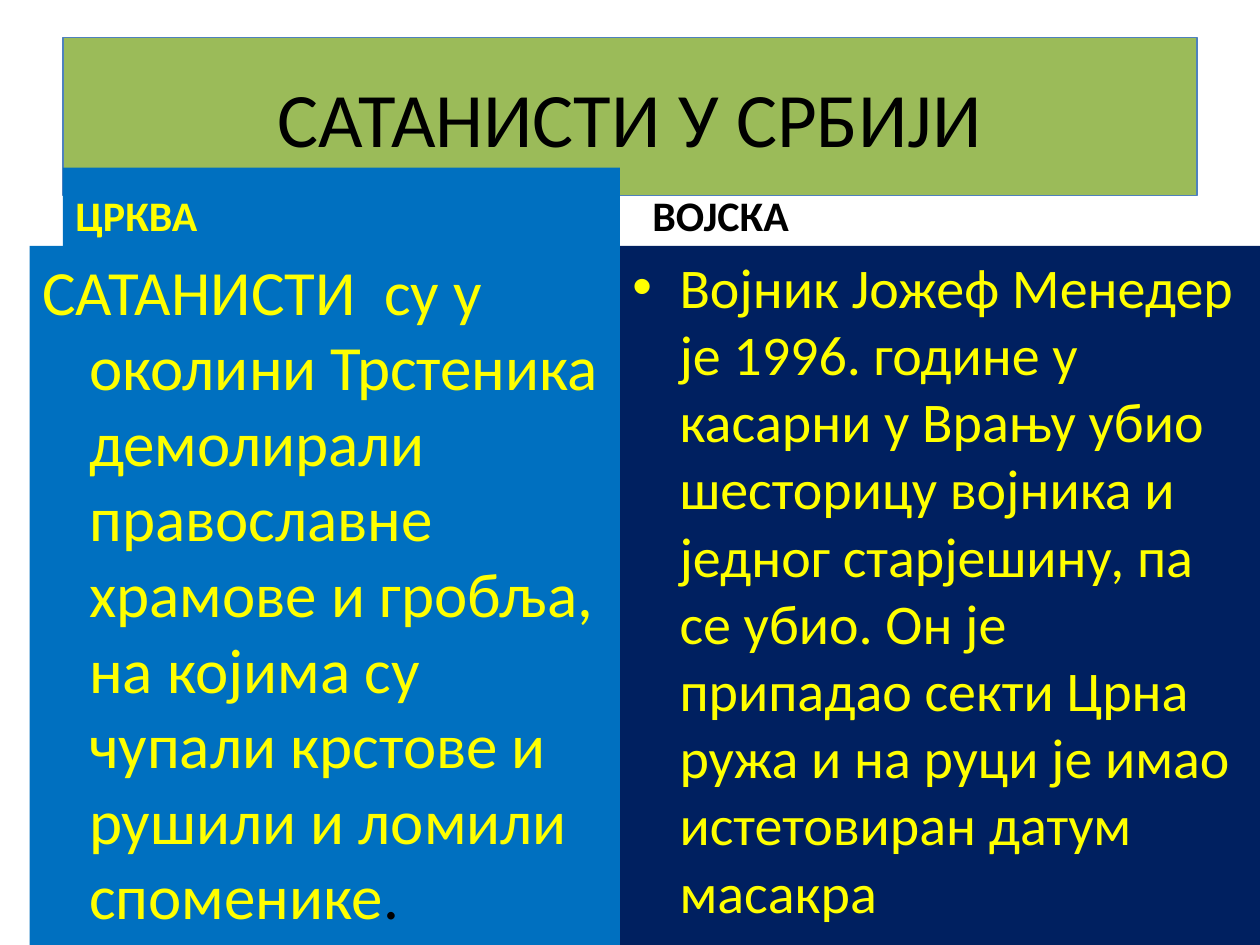
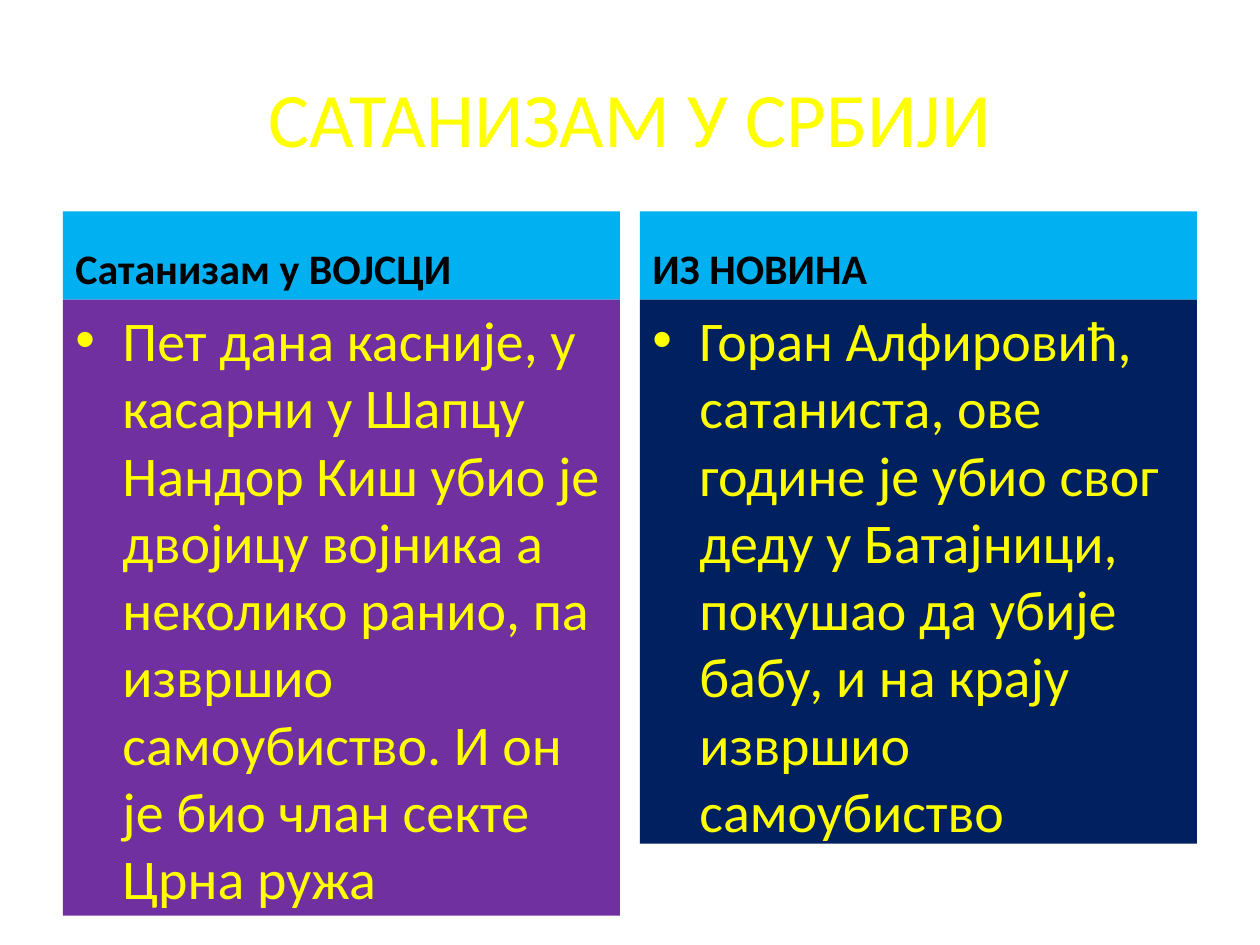
from lxml.etree import SubElement
from pptx import Presentation
from pptx.dml.color import RGBColor
from pptx.enum.shapes import MSO_SHAPE
from pptx.enum.text import MSO_ANCHOR, PP_ALIGN
from pptx.oxml.ns import qn
from pptx.util import Cm, Pt

BLACK, YELLOW, GREEN, EDGE = "000000", "FFFF00", "9BBB59", "4F81BD"
BLUE, SKY, NAVY, PLUM = "0070C0", "00B0F0", "002060", "7030A0"
LEFT, RIGHT, WIDE = 1.27, 12.9, 11.23


def color(code):
    return RGBColor.from_string(code)


class Deck:
    font = "Calibri"

    def __init__(self):
        self.prs = Presentation()
        self.prs.slide_width, self.prs.slide_height = Cm(25.4), Cm(19.05)

    def page(self):
        self.slide = self.prs.slides.add_slide(self.prs.slide_layouts[6])

    def block(self, box, text, size, ink, fill=None, line=None, anchor=MSO_ANCHOR.TOP):
        place = [Cm(n) for n in box]
        if fill:
            shape = self.slide.shapes.add_shape(MSO_SHAPE.RECTANGLE, *place)
            shape.shadow.inherit = False
            shape.fill.solid()
            shape.fill.fore_color.rgb = color(fill)
            if line:
                shape.line.color.rgb = color(line)
                shape.line.width = Pt(0.75)
            else:
                shape.line.fill.background()
        else:
            shape = self.slide.shapes.add_textbox(*place)
        frame = shape.text_frame
        frame.word_wrap = True
        frame.vertical_anchor = anchor
        para = frame.paragraphs[0]
        para.add_run().text = text
        para.alignment = PP_ALIGN.LEFT
        para.font.name, para.font.size = self.font, Pt(size)
        para.font.color.rgb = color(ink)
        return para

    def title(self, text, ink, fill=None, line=None):
        box = (LEFT, 0.76, 22.86, 3.18)
        para = self.block(box, text, 44, ink, fill, line, MSO_ANCHOR.MIDDLE)
        para.alignment = PP_ALIGN.CENTER

    def head(self, left, top, high, text, ink=BLACK, fill=None):
        box = (left, top, WIDE, high)
        para = self.block(box, text, 24, ink, fill, anchor=MSO_ANCHOR.BOTTOM)
        para.font.bold = True

    def body(self, box, text, fill, size=32, bullet=True):
        para = self.block(box, text, size, YELLOW, fill)
        props = para._p.get_or_add_pPr()
        props.set("marL", str(Cm(0.95)))
        props.set("indent", str(-Cm(0.95)))
        if bullet:
            mark = SubElement(props, qn("a:buFont"), typeface="Arial")
            dot = SubElement(props, qn("a:buChar"), char="•")
            props.remove(mark)
            props.remove(dot)
            props.insert(0, mark)
            props.insert(1, dot)
        return para


def main():
    deck = Deck()

    deck.page()
    deck.title("САТАНИСТИ У СРБИЈИ", BLACK, GREEN, EDGE)
    deck.head(LEFT, 3.38, 1.58, "ЦРКВА", YELLOW, BLUE)
    para = deck.body(
        (0.6, 4.96, 11.9, 14.09),
        "САТАНИСТИ  су у околини Трстеника демолирали православне храмове "
        "и гробља, на којима су чупали крстове и рушили и ломили споменике",
        BLUE, 36, False)
    stop = para.add_run()
    stop.text = "."
    stop.font.color.rgb = color(BLACK)
    deck.head(RIGHT, 3.57, 1.39, "ВОЈСКА")
    deck.body(
        (12.5, 4.96, 12.9, 14.09),
        "Војник Јожеф Менедер је 1996. године у касарни у Врању убио "
        "шесторицу војника и једног старјешину, па се убио. Он је припадао "
        "секти Црна ружа и на руци је имао истетовиран датум масакра",
        NAVY)

    deck.page()
    deck.title("САТАНИЗАМ У СРБИЈИ", YELLOW)
    columns = [
        (LEFT, "Сатанизам у ВОЈСЦИ", 12.42, PLUM,
         "Пет дана касније, у касарни у Шапцу Нандор Киш убио је двојицу "
         "војника а неколико ранио, па извршио самоубиство. И он је био "
         "члан секте Црна ружа"),
        (RIGHT, "ИЗ НОВИНА", 10.97, NAVY,
         "Горан Алфировић, сатаниста, ове године је убио свог деду у "
         "Батајници, покушао да убије бабу, и на крају извршио самоубиство"),
    ]
    for left, name, high, fill, text in columns:
        deck.head(left, 4.26, 1.78, name, fill=SKY)
        deck.body((left, 6.04, WIDE, high), text, fill)

    deck.prs.save("out.pptx")


if __name__ == "__main__":
    main()
